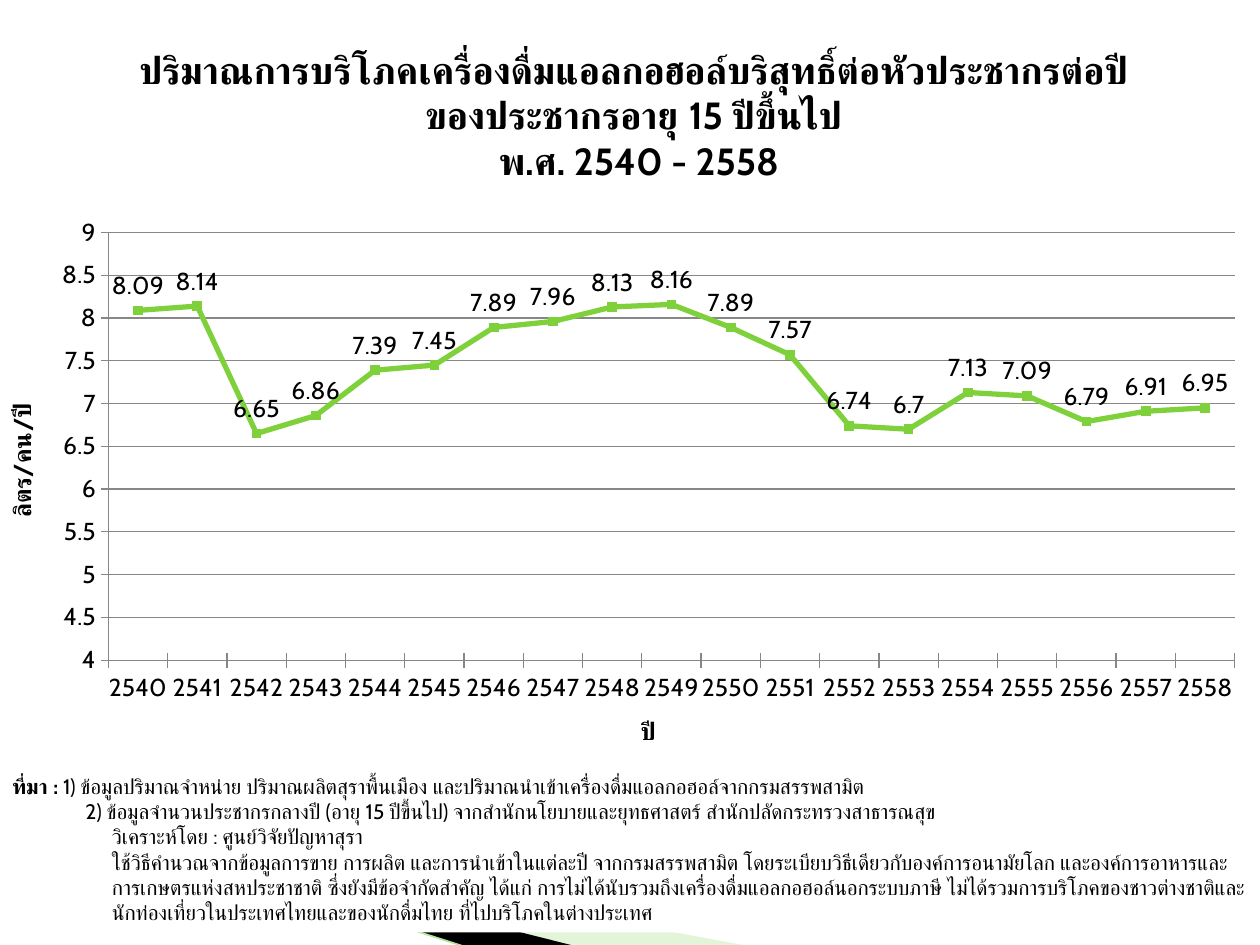
"""Build a slide charting alcohol consumption per head in Thailand, 2540 to 2558."""
from lxml import etree
from pptx import Presentation
from pptx.chart.data import CategoryChartData
from pptx.dml.color import RGBColor
from pptx.enum.chart import XL_CHART_TYPE, XL_LABEL_POSITION, XL_MARKER_STYLE, XL_TICK_MARK
from pptx.enum.text import MSO_ANCHOR, MSO_AUTO_SIZE, PP_ALIGN
from pptx.oxml import parse_xml
from pptx.oxml.ns import nsdecls, qn
from pptx.util import Inches, Pt

LINE = XL_CHART_TYPE.LINE_MARKERS
ABOVE = XL_LABEL_POSITION.ABOVE
SQUARE = XL_MARKER_STYLE.SQUARE
CROSS = XL_TICK_MARK.CROSS
MIDDLE = MSO_ANCHOR.MIDDLE
GROW = MSO_AUTO_SIZE.SHAPE_TO_FIT_TEXT
CENTER = PP_ALIGN.CENTER

FACE = "Cabin"
BLACK, WHITE, GREEN, GRAY = "000000", "FFFFFF", "7FD13B", "878787"

TITLE = [
    "ปริมาณการบริโภคเครื่องดื่มแอลกอฮอล์บริสุทธิ์ต่อหัวประชากรต่อปี ",
    "ของประชากรอายุ 15 ปีขึ้นไป ",
    "พ.ศ. 2540 - 2558",
]
YEARS = [str(year) for year in range(2540, 2559)]
LITRES = [8.09, 8.14, 6.65, 6.86, 7.39, 7.45, 7.89, 7.96, 8.13, 8.16,
          7.89, 7.57, 6.74, 6.7, 7.13, 7.09, 6.79, 6.91, 6.95]
NOTES = [
    (-0.79, [("ที่มา : ", True),
             ("1) ข้อมูลปริมาณจำหน่าย ปริมาณผลิตสุราพื้นเมือง และปริมาณนำเข้าเครื่องดื่มแอลกอฮอล์จากกรมสรรพสามิต", False)]),
    (-0.21, [("2) ข้อมูลจำนวนประชากรกลางปี (อายุ 15 ปีขึ้นไป) จากสำนักนโยบายและยุทธศาสตร์ สำนักปลัดกระทรวงสาธารณสุข", False)]),
    (0, [("วิเคราะห์โดย : ศูนย์วิจัยปัญหาสุรา", False)]),
    (0, [("ใช้วิธีคำนวณจากข้อมูลการขาย การผลิต และการนำเข้าในแต่ละปี จากกรมสรรพสามิต "
          "โดยระเบียบวิธีเดียวกับองค์การอนามัยโลก และองค์การอาหารและการเกษตรแห่งสหประชาชาติ "
          "ซึ่งยังมีข้อจำกัดสำคัญ ได้แก่ การไม่ได้นับรวมถึงเครื่องดื่มแอลกอฮอล์นอกระบบภาษี "
          "ไม่ได้รวมการบริโภคของชาวต่างชาติและนักท่องเที่ยวในประเทศไทยและของนักดื่มไทย "
          "ที่ไปบริโภคในต่างประเทศ", False)]),
]
WEDGES = [
    ("B8E7A1", 40, [(0.55, 6.51), (5.95, 7.51), (4.56, 7.51)]),
    (BLACK, 100, [(0.53, 6.49), (4.57, 7.51), (3.72, 7.52)]),
]
PLOT = {"x": 0.086, "y": 0.047, "w": 0.894, "h": 0.775}


def box(*sizes):
    return [Inches(size) for size in sizes]


def paint(part, color):
    part.solid()
    part.fore_color.rgb = RGBColor.from_string(color)


def style(font, size, bold=False):
    for key, value in {"name": FACE, "size": Pt(size), "bold": bold}.items():
        setattr(font, key, value)
    font.color.rgb = RGBColor.from_string(BLACK)


def add_wedge(shapes, color, alpha, points):
    first, *rest = [tuple(box(*point)) for point in points]
    pen = shapes.build_freeform(*first)
    pen.add_line_segments(rest)
    wedge = pen.convert_to_shape()
    wedge.shadow.inherit = False
    wedge.line.fill.background()
    paint(wedge.fill, color)
    tint = wedge.fill._xPr.find(qn("a:solidFill"))[0]
    etree.SubElement(tint, qn("a:alpha")).set("val", str(alpha * 1000))


def add_edge(shapes):
    start, end = (-0.01, 6.33), (3.71, 7.52)
    edge = shapes.add_connector(1, *box(*start, *end))
    edge.line.width = Pt(0.95)
    paint(edge.line.fill, "B1E399")
    etree.SubElement(edge._element.spPr, qn("a:effectLst"))


def set_title(title):
    title.left, title.top, title.width, title.height = box(0.46, 0.24, 9.22, 1.34)
    paint(title.fill, WHITE)
    frame = title.text_frame
    frame.text = "\v".join(TITLE)
    frame.vertical_anchor = MIDDLE
    frame.paragraphs[0].alignment = CENTER
    for run in frame.paragraphs[0].runs:
        style(run.font, 21.6, True)


def set_axis(axis, label):
    axis.major_tick_mark = CROSS
    paint(axis.format.line.fill, GRAY)
    style(axis.tick_labels.font, 14)
    frame = axis.axis_title.text_frame
    frame.text = label
    style(frame.paragraphs[0].runs[0].font, 14, True)


def place_plot(chart):
    area = chart._chartSpace.chart.plotArea
    for old in area.findall(qn("c:layout")):
        area.remove(old)
    layout = parse_xml(f"<c:layout {nsdecls('c')}><c:manualLayout/></c:layout>")
    parts = {"layoutTarget": "inner", "xMode": "edge", "yMode": "edge", **PLOT}
    for name, value in parts.items():
        etree.SubElement(layout[0], qn(f"c:{name}")).set("val", str(value))
    area.insert(0, layout)


def add_graph(shapes):
    data = CategoryChartData()
    data.categories = YEARS
    data.add_series("Series 1", LITRES)
    chart = shapes.add_chart(LINE, *box(0, 1.64, 10, 4.38), data).chart
    chart.has_title = chart.has_legend = False
    style(chart.font, 14)
    set_axis(chart.category_axis, "ปี")
    scale = chart.value_axis
    set_axis(scale, "ลิตร/คน/ปี")
    limits = {"minimum_scale": 4, "maximum_scale": 9, "major_unit": 0.5}
    for key, value in limits.items():
        setattr(scale, key, value)
    scale.tick_labels.number_format = "General"
    scale.tick_labels.number_format_is_linked = False
    paint(scale.major_gridlines.format.line.fill, GRAY)
    plot = chart.plots[0]
    plot.vary_by_categories = False
    series = plot.series[0]
    series.smooth = False
    series.format.line.width = Pt(3)
    series.marker.style, series.marker.size = SQUARE, 5
    mark = series.marker.format
    for fill in (series.format.line.fill, mark.fill, mark.line.fill):
        paint(fill, GREEN)
    labels = series.data_labels
    labels.show_value = True
    labels.position = ABOVE
    style(labels.font, 14)
    place_plot(chart)


def add_notes(shapes):
    note = shapes.add_textbox(*box(0, 6.09, 10, 1.31))
    paint(note.fill, WHITE)
    frame = note.text_frame
    frame.word_wrap = True
    frame.auto_size = GROW
    for index, (indent, parts) in enumerate(NOTES):
        para = frame.add_paragraph() if index else frame.paragraphs[0]
        props = para._p.get_or_add_pPr()
        props.set("marL", str(Inches(0.79)))
        props.set("indent", str(Inches(indent)))
        for text, bold in parts:
            run = para.add_run()
            run.text = text
            style(run.font, 12, bold)


def main():
    deck = Presentation()
    deck.slide_width, deck.slide_height = box(10, 7.5)
    slide = deck.slides.add_slide(deck.slide_layouts[5])
    paint(slide.background.fill, WHITE)
    for wedge in WEDGES:
        add_wedge(slide.shapes, *wedge)
    add_edge(slide.shapes)
    title = slide.shapes.title
    set_title(title)
    slide.shapes._spTree.append(title._element)
    add_graph(slide.shapes)
    add_notes(slide.shapes)
    deck.save("out.pptx")


if __name__ == "__main__":
    main()
